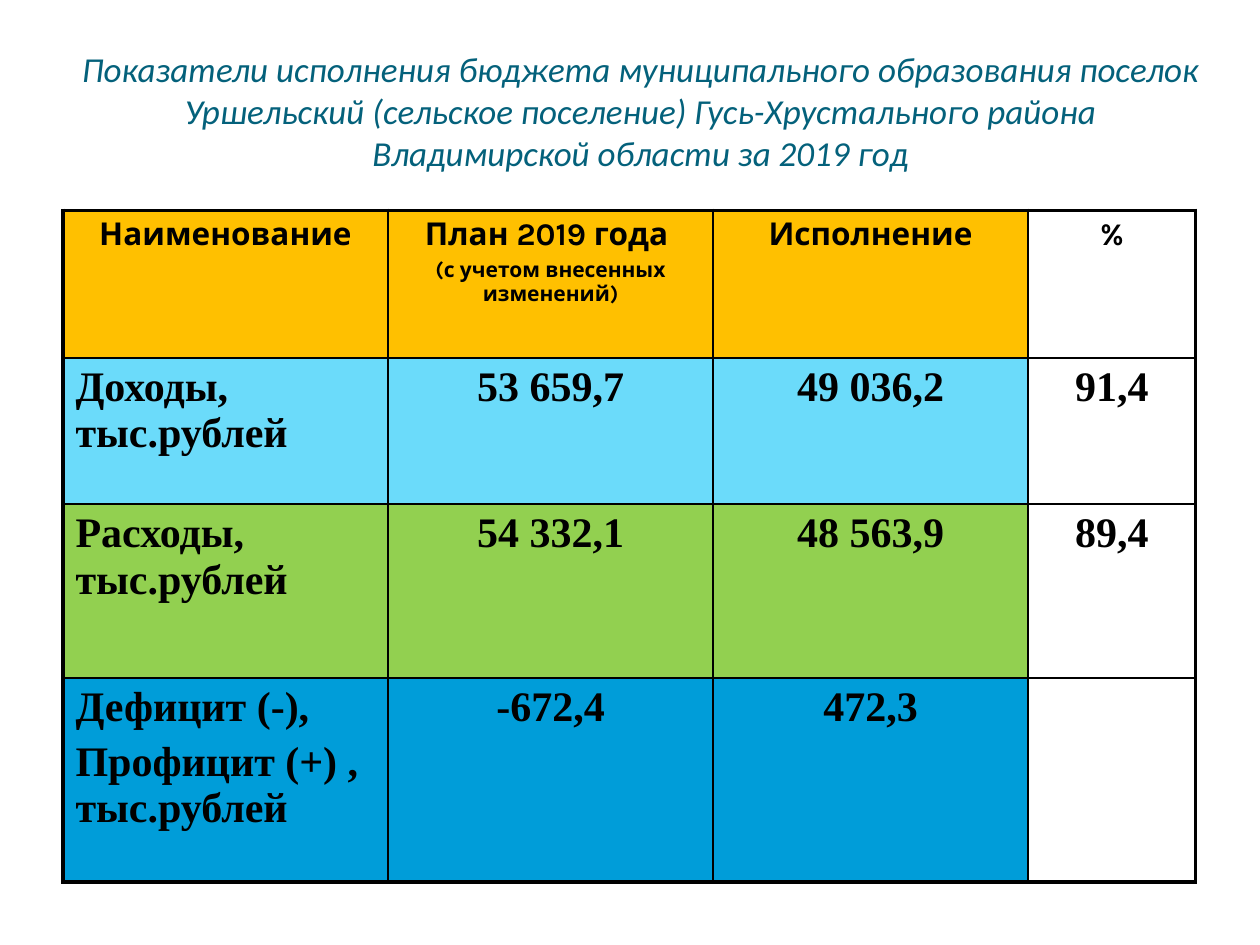
import pptx
import pptx.dml.color
import pptx.enum.text
import pptx.oxml
import pptx.oxml.ns
import pptx.util
from dataclasses import dataclass

Inches = pptx.util.Inches
Pt = pptx.util.Pt
ALIGN = pptx.enum.text.PP_ALIGN


@dataclass(frozen=True)
class Theme:
    title_color: str = "04617B"
    ink: str = "000000"
    header_fill: str = "FFC000"
    income_fill: str = "6BDBFA"
    expense_fill: str = "92D050"
    balance_fill: str = "009DD9"
    title_font: str = "Calibri"
    header_font: str = "Karla"
    body_font: str = "Times New Roman"
    title_size: float = 20
    header_size: float = 18
    note_size: float = 12
    body_size: float = 24
    outer_line: float = 2.25
    inner_line: float = 1


class BudgetSlide:
    def __init__(self, slide, theme):
        self.slide = slide
        self.theme = theme

    def format_paragraph(self, paragraph, font, size, color, align,
                         bold=False, italic=False):
        paragraph.alignment = align
        for run in paragraph.runs:
            run.font.name = font
            run.font.size = Pt(size)
            run.font.bold = bold
            run.font.italic = italic
            run.font.color.rgb = pptx.dml.color.RGBColor.from_string(color)

    def title(self, text, left, top, width, height):
        box = self.slide.shapes.add_textbox(
            Inches(left), Inches(top), Inches(width), Inches(height))
        frame = box.text_frame
        frame.word_wrap = True
        frame.text = text
        self.format_paragraph(frame.paragraphs[0], self.theme.title_font,
                              self.theme.title_size, self.theme.title_color,
                              ALIGN.CENTER, italic=True)

    def cell_borders(self, cell, outer_sides):
        properties = cell._tc.get_or_add_tcPr()
        for side in "LRTB":
            points = self.theme.outer_line if side in outer_sides else self.theme.inner_line
            properties.append(pptx.oxml.parse_xml(
                f'<a:ln{side} {pptx.oxml.ns.nsdecls("a")} w="{Pt(points)}">'
                f'<a:solidFill><a:srgbClr val="{self.theme.ink}"/></a:solidFill>'
                f'</a:ln{side}>'))

    def cell_text(self, cell, text, is_header, align):
        theme = self.theme
        cell.text_frame.text = text
        for index, paragraph in enumerate(cell.text_frame.paragraphs):
            size = theme.body_size
            if is_header:
                size = theme.note_size if index else theme.header_size
            font = theme.header_font if is_header else theme.body_font
            self.format_paragraph(paragraph, font, size, theme.ink, align, bold=True)
            paragraph.space_before = Pt(0.2 * size)

    def table(self, rows, fills, left, top, widths, heights):
        table = self.slide.shapes.add_table(
            len(rows), len(widths), Inches(left), Inches(top),
            Inches(sum(widths)), Inches(sum(heights))).table
        table.first_row = table.horz_banding = False
        for column, width in zip(table.columns, widths):
            column.width = Inches(width)
        for row, height in zip(table.rows, heights):
            row.height = Inches(height)

        last_row, last_column = len(rows) - 1, len(widths) - 1
        for r, texts in enumerate(rows):
            for c, text in enumerate(texts):
                cell = table.cell(r, c)
                edges = {"L": c == 0, "R": c == last_column,
                         "T": r == 0, "B": r == last_row}
                self.cell_borders(cell, [side for side in edges if edges[side]])
                # The percentage column stays unfilled
                if c == last_column:
                    cell.fill.background()
                else:
                    cell.fill.solid()
                    cell.fill.fore_color.rgb = pptx.dml.color.RGBColor.from_string(fills[r])
                align = ALIGN.LEFT if r and c == 0 else ALIGN.CENTER
                self.cell_text(cell, text, r == 0, align)


def main():
    presentation = pptx.Presentation()
    presentation.slide_width = Inches(10)
    presentation.slide_height = Inches(7.5)
    theme = Theme()
    budget = BudgetSlide(
        presentation.slides.add_slide(presentation.slide_layouts[6]), theme)

    # Heading
    budget.title(
        "Показатели исполнения бюджета муниципального образования поселок "
        "Уршельский (сельское поселение) Гусь-Хрустального района "
        "Владимирской области за 2019 год", 0.5, 0.33, 9.17, 1.1)

    # Budget figures
    budget_rows = [
        ["Наименование", "План 2019 года \n(с учетом внесенных изменений)", "Исполнение", "%"],
        ["Доходы, тыс.рублей", "53 659,7", "49 036,2", "91,4"],
        ["Расходы, тыс.рублей", "54 332,1", "48 563,9", "89,4"],
        ["Дефицит (-),\nПрофицит (+) , тыс.рублей", "-672,4", "472,3", ""],
    ]
    row_fills = [theme.header_fill, theme.income_fill,
                 theme.expense_fill, theme.balance_fill]
    budget.table(budget_rows, row_fills, 0.5, 1.67,
                 widths=[2.58, 2.58, 2.5, 1.33], heights=[1.17, 1.16, 1.38, 1.62])

    presentation.save("out.pptx")


if __name__ == "__main__":
    main()
